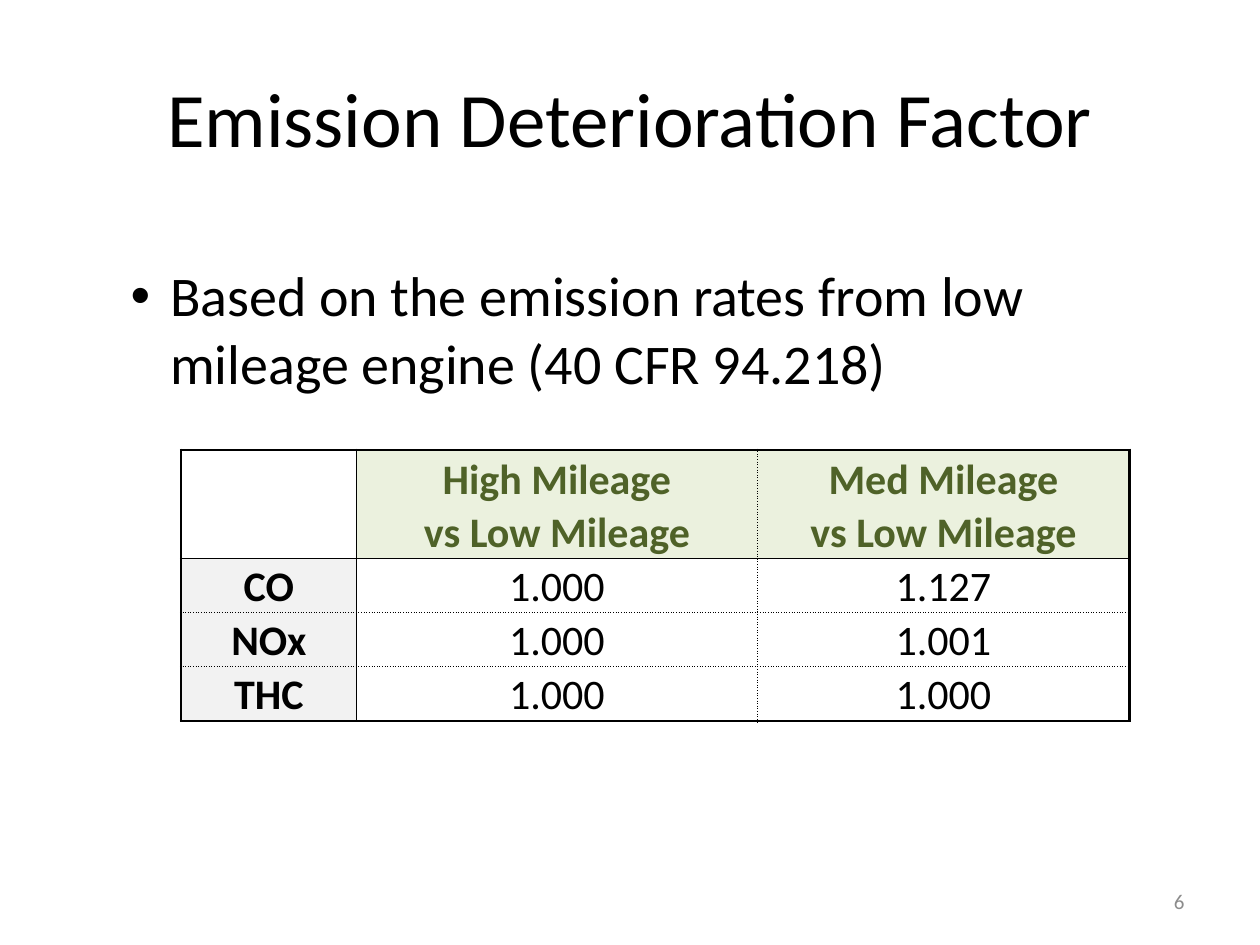
import pptx
import pptx.util
import pptx.dml.color
import pptx.enum.text
import pptx.oxml
import pptx.oxml.ns
import lxml.etree

Pt = pptx.util.Pt
ALIGN = pptx.enum.text.PP_ALIGN
ANCHOR = pptx.enum.text.MSO_ANCHOR
AUTO_SIZE = pptx.enum.text.MSO_AUTO_SIZE
qn = pptx.oxml.ns.qn

BLACK, GREY, GREEN = "000000", "8C8C8C", "4F6228"
HEADER_FILL, LABEL_FILL = "EBF1DE", "F2F2F2"

# Borders are (width in points, dash); None draws no line
OUTER, DOTTED = (1.5, "solid"), (0.5, "sysDot")
COLUMN_EDGES = [OUTER, (1, "solid"), DOTTED, OUTER]
ROW_EDGES = [OUTER, None, (0.5, "solid"), DOTTED, DOTTED, OUTER]

FACTORS = [
    ["", "High Mileage", "Med Mileage"],
    ["", "vs Low Mileage", "vs Low Mileage"],
    ["CO", "1.000", "1.127"],
    ["NOx", "1.000", "1.001"],
    ["THC", "1.000", "1.000"],
]
HEADER_ROWS = 2


def color(value):
    return pptx.dml.color.RGBColor.from_string(value)


class SlideBuilder:
    font = "Calibri"

    def __init__(self, slide):
        self.slide = slide

    def place(self, shape, left, top, width, height):
        shape.left, shape.top = Pt(left), Pt(top)
        shape.width, shape.height = Pt(width), Pt(height)

    def set_text(self, text_frame, text, size, text_color=BLACK, align=None, bold=False):
        text_frame.text = text
        paragraph = text_frame.paragraphs[0]
        paragraph.alignment = align
        for run in paragraph.runs:
            run.font.name = self.font
            run.font.size = Pt(size)
            run.font.bold = bold
            run.font.color.rgb = color(text_color)
        return paragraph

    def title(self, text, *box):
        shape = self.slide.shapes.title
        self.place(shape, *box)
        shape.text_frame.vertical_anchor = ANCHOR.MIDDLE
        self.set_text(shape.text_frame, text, 44, align=ALIGN.CENTER)

    def bullet(self, text, *box):
        shape = self.slide.placeholders[1]
        self.place(shape, *box)
        shape.text_frame.auto_size = AUTO_SIZE.SHAPE_TO_FIT_TEXT
        paragraph = self.set_text(shape.text_frame, text, 32)
        paragraph.level = 1
        properties = paragraph._p.get_or_add_pPr()
        properties.set("marL", str(Pt(58.5)))
        properties.set("indent", str(Pt(-22.5)))
        lxml.etree.SubElement(properties, qn("a:buFont")).set("typeface", "Arial")
        lxml.etree.SubElement(properties, qn("a:buChar")).set("char", "•")

    def page_number(self, text, *box):
        shape = self.slide.shapes.add_textbox(*map(Pt, box))
        shape.text_frame.word_wrap = True
        shape.text_frame.vertical_anchor = ANCHOR.MIDDLE
        self.set_text(shape.text_frame, text, 12, GREY, ALIGN.RIGHT)

    def border(self, cell, side, edge):
        properties = cell._tc.get_or_add_tcPr()
        line = lxml.etree.SubElement(properties, qn("a:ln" + side))
        if edge is None:
            lxml.etree.SubElement(line, qn("a:noFill"))
            return
        width, dash = edge
        line.set("w", str(Pt(width)))
        fill = lxml.etree.SubElement(line, qn("a:solidFill"))
        lxml.etree.SubElement(fill, qn("a:srgbClr")).set("val", BLACK)
        lxml.etree.SubElement(line, qn("a:prstDash")).set("val", dash)

    def cell(self, cell, text, row, column):
        is_header, is_label = row < HEADER_ROWS, column == 0
        cell.margin_left = cell.margin_right = cell.margin_top = Pt(0.75)
        cell.margin_bottom = 0
        cell.vertical_anchor = ANCHOR.BOTTOM
        self.set_text(cell.text_frame, text, 24, GREEN if is_header else BLACK,
                      ALIGN.CENTER, bold=is_header or is_label)
        # Borders must precede the fill in the cell properties
        self.border(cell, "L", COLUMN_EDGES[column])
        self.border(cell, "R", COLUMN_EDGES[column + 1])
        self.border(cell, "T", ROW_EDGES[row])
        self.border(cell, "B", ROW_EDGES[row + 1])
        if is_header == is_label:
            cell.fill.background()
        else:
            cell.fill.solid()
            cell.fill.fore_color.rgb = color(HEADER_FILL if is_header else LABEL_FILL)

    def table(self, rows, left, top, widths, heights):
        frame = self.slide.shapes.add_table(
            len(rows), len(widths), Pt(left), Pt(top), Pt(sum(widths)), Pt(sum(heights)))
        table = frame.table
        table.first_row = table.horz_banding = False
        for column, width in zip(table.columns, widths):
            column.width = Pt(width)
        for row, height in zip(table.rows, heights):
            row.height = Pt(height)
        for row, texts in enumerate(rows):
            for column, text in enumerate(texts):
                self.cell(table.cell(row, column), text, row, column)


def main():
    presentation = pptx.Presentation()
    presentation.slide_width, presentation.slide_height = Pt(720), Pt(540)
    slide = presentation.slides.add_slide(presentation.slide_layouts[1])
    builder = SlideBuilder(slide)

    # Title and statement
    builder.title("Emission Deterioration Factor", 36, 21.6, 648, 90)
    builder.bullet("Based on the emission rates from low mileage engine (40 CFR 94.218)",
                   31.5, 145.5, 630, 85)

    # Page number
    builder.page_number("6", 516, 500.5, 168, 28.75)

    # Deterioration factors
    builder.table(FACTORS, 103.5, 257, [100.25, 229, 212.75], [32.25, 29.75, 31, 31, 31])

    presentation.save("out.pptx")


if __name__ == "__main__":
    main()
